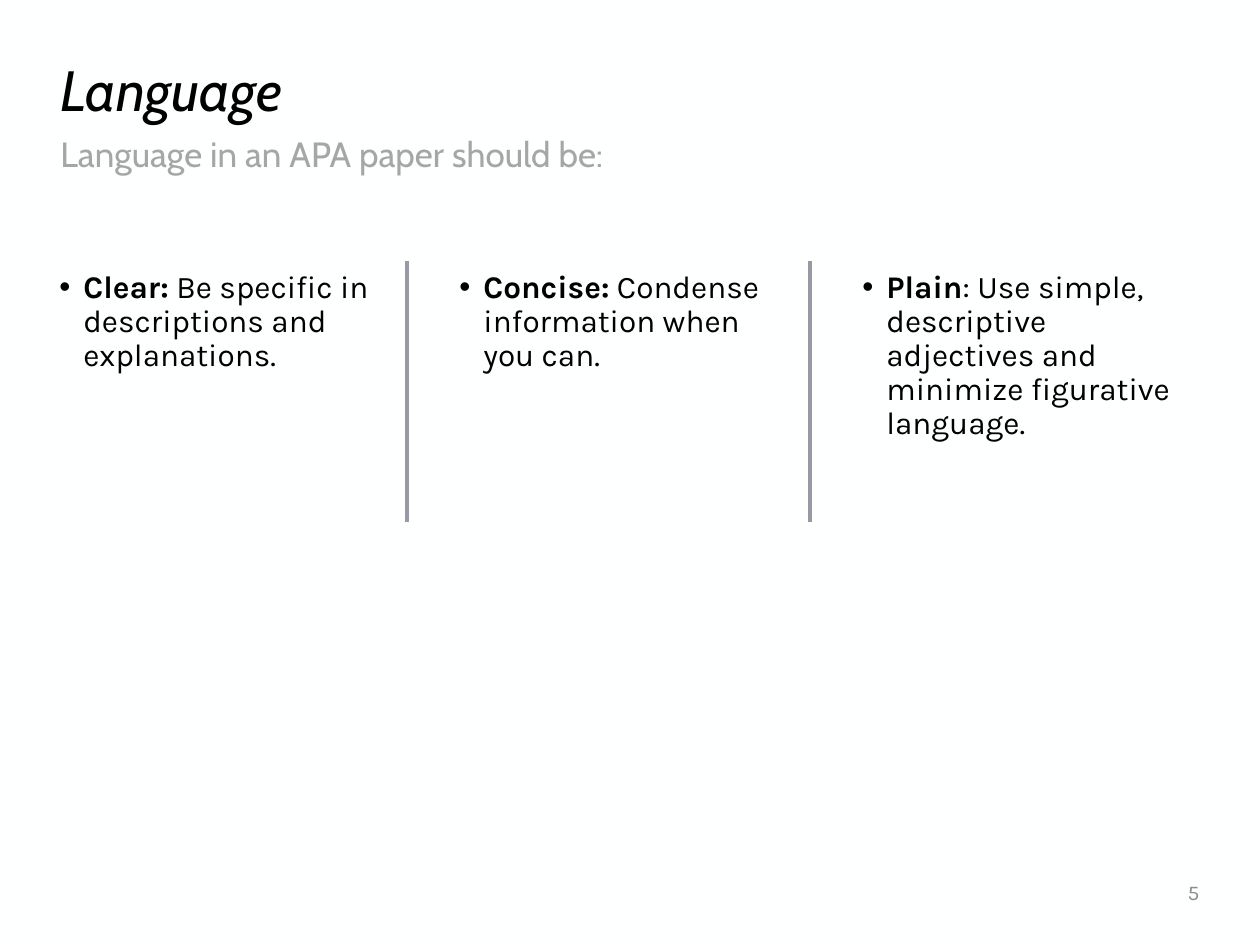
"""Build the Language slide: a title, a subtitle and three bulleted columns."""
from lxml.etree import SubElement
from pptx import Presentation
from pptx.dml.color import RGBColor
from pptx.enum.shapes import MSO_CONNECTOR
from pptx.enum.text import MSO_ANCHOR, PP_ALIGN
from pptx.oxml.ns import qn
from pptx.util import Emu, Pt

SCALE = 914400 / 126
COLORS = {
    "background": "FEFFFF",
    "text": "000000",
    "subtitle": "A6A6A6",
    "divider": "979AA2",
    "number": "8C8C8C",
}


def px(length):
    return Emu(round(length * SCALE))


def add_text(slide, runs, left, top, width, height, *, size, color, font="Karla",
             italic=False, align=PP_ALIGN.LEFT, anchor=MSO_ANCHOR.TOP,
             line_spacing=0.9, bullet_indent=0):
    shape = slide.shapes.add_textbox(px(left), px(top), px(width), px(height))
    frame = shape.text_frame
    frame.word_wrap = True
    frame.vertical_anchor = anchor
    paragraph = frame.paragraphs[0]
    paragraph.alignment = align
    paragraph.line_spacing = line_spacing
    if bullet_indent:
        properties = paragraph._p.get_or_add_pPr()
        properties.set("marL", str(px(bullet_indent)))
        properties.set("indent", str(-px(bullet_indent)))
        SubElement(properties, qn("a:buFont")).set("typeface", "Arial")
        SubElement(properties, qn("a:buChar")).set("char", "•")
    for text, bold in runs:
        run = paragraph.add_run()
        run.text = text
        run.font.name = font
        run.font.size = Pt(size)
        run.font.bold = bold
        run.font.italic = italic
        run.font.color.rgb = RGBColor.from_string(COLORS[color])


presentation = Presentation()
presentation.slide_width = px(1260)
presentation.slide_height = px(945)
slide = presentation.slides.add_slide(presentation.slide_layouts[6])
slide.background.fill.solid()
slide.background.fill.fore_color.rgb = RGBColor.from_string(COLORS["background"])

add_text(slide, [("Language", False)], 48, 53, 1164, 81, size=32.4, color="text",
         font="Cabin", italic=True, anchor=MSO_ANCHOR.MIDDLE)
add_text(slide, [("Language in an APA paper should be:", False)], 48, 131, 1165, 50,
         size=20, color="subtitle", font="Cabin")

columns = [
    (47, "Clear:", " Be specific in descriptions and explanations."),
    (447, "Concise:", " Condense information when you can."),
    (850, "Plain", ": Use simple, descriptive adjectives and minimize figurative language."),
]
for left, term, advice in columns:
    add_text(slide, [(term, True), (advice, False)], left, 265, 363, 268,
             size=18, color="text", bullet_indent=24)

for x in (407, 810):
    divider = slide.shapes.add_connector(MSO_CONNECTOR.STRAIGHT, px(x), px(261), px(x), px(522))
    divider.line.color.rgb = RGBColor.from_string(COLORS["divider"])
    divider.line.width = Pt(2.25)
    SubElement(divider._element.spPr, qn("a:effectLst"))

add_text(slide, [("5", False)], 1061, 867, 151, 50, size=12, color="number",
         align=PP_ALIGN.RIGHT, anchor=MSO_ANCHOR.MIDDLE, line_spacing=1.0)

presentation.save("out.pptx")
